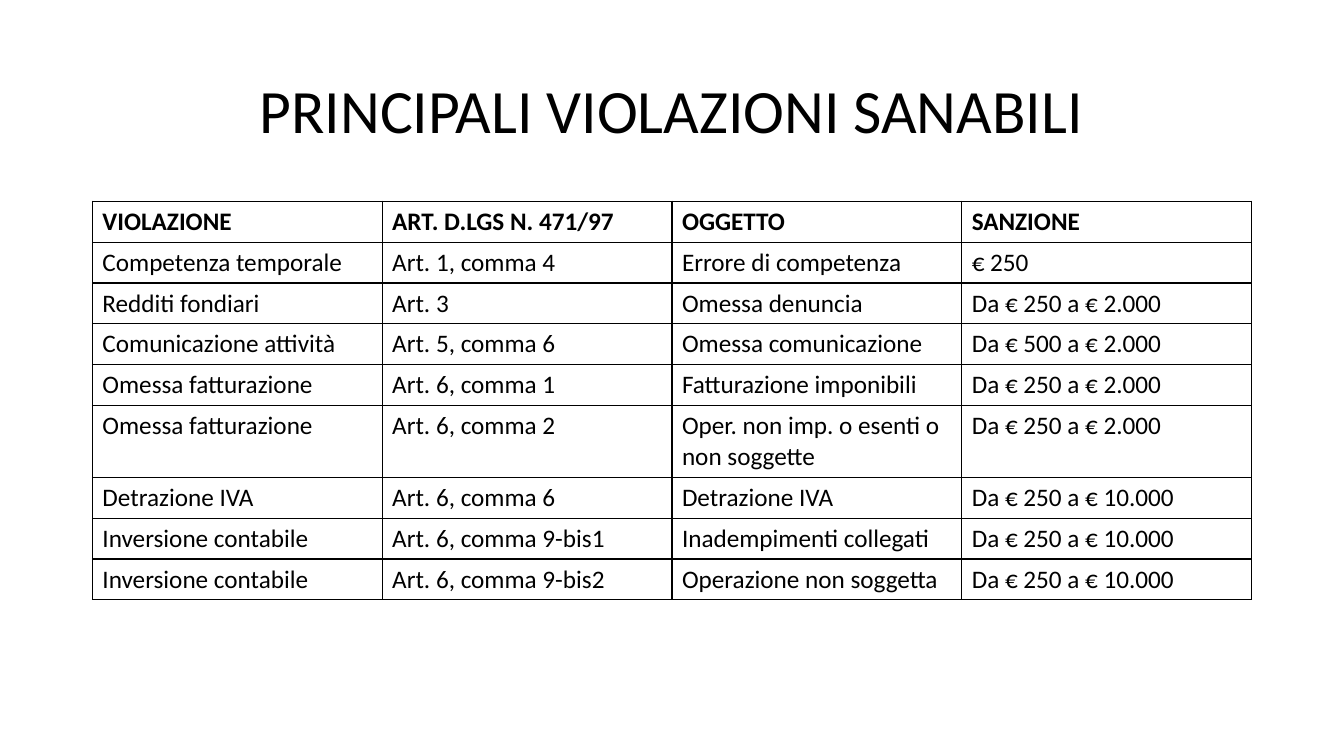
from lxml import etree
from pptx import Presentation
from pptx.dml import color
from pptx.enum import text
from pptx.oxml import ns
from pptx.util import Pt

FONT = "Calibri"
BLACK = "000000"
LEFT, WIDTH = 66, 828
ROW = 29.2

FINES = [
    ("VIOLAZIONE", "ART. D.LGS N. 471/97", "OGGETTO", "SANZIONE"),
    ("Competenza temporale", "Art. 1, comma 4", "Errore di competenza", "€ 250"),
    ("Redditi fondiari", "Art. 3", "Omessa denuncia", "Da € 250 a € 2.000"),
    ("Comunicazione attività", "Art. 5, comma 6", "Omessa comunicazione",
     "Da € 500 a € 2.000"),
    ("Omessa fatturazione", "Art. 6, comma 1", "Fatturazione imponibili",
     "Da € 250 a € 2.000"),
    ("Omessa fatturazione", "Art. 6, comma 2",
     "Oper. non imp. o esenti o non soggette", "Da € 250 a € 2.000"),
    ("Detrazione IVA", "Art. 6, comma 6", "Detrazione IVA", "Da € 250 a € 10.000"),
    ("Inversione contabile", "Art. 6, comma 9-bis1", "Inadempimenti collegati",
     "Da € 250 a € 10.000"),
    ("Inversione contabile", "Art. 6, comma 9-bis2", "Operazione non soggetta",
     "Da € 250 a € 10.000"),
]


def paint(target, shade):
    target.rgb = color.RGBColor.from_string(shade)


def add_run(para, words, size, bold=False):
    run = para.add_run()
    run.text = words
    run.font.name = FONT
    run.font.size = Pt(size)
    run.font.bold = bold
    paint(run.font.color, BLACK)


def add_title(slide, words):
    title = slide.shapes.title
    title.left, title.top = Pt(LEFT), Pt(28.75)
    title.width, title.height = Pt(WIDTH), Pt(104.4)
    frame = title.text_frame
    frame.word_wrap = True
    frame.vertical_anchor = text.MSO_ANCHOR.MIDDLE
    para = frame.paragraphs[0]
    para.alignment = text.PP_ALIGN.CENTER
    para.line_spacing = 0.9
    add_run(para, words, 44)


def add_border(cell, shade, width):
    """Draw a solid line on all four sides of a cell."""
    props = cell._tc.get_or_add_tcPr()
    for side in ("a:lnL", "a:lnR", "a:lnT", "a:lnB"):
        line = etree.SubElement(props, ns.qn(side), w=str(Pt(width)))
        fill = etree.SubElement(line, ns.qn("a:solidFill"))
        etree.SubElement(fill, ns.qn("a:srgbClr"), val=shade)


def add_grid(slide, rows):
    count = len(rows[0])
    frame = slide.shapes.add_table(len(rows), count, Pt(LEFT), Pt(143.75),
                                   Pt(WIDTH), Pt(ROW * len(rows)))
    table = frame.table
    table.first_row = table.horz_banding = False
    for col in table.columns:
        col.width = Pt(WIDTH / count)
    for i, row in enumerate(rows):
        table.rows[i].height = Pt(ROW)
        for j, words in enumerate(row):
            cell = table.cell(i, j)
            add_border(cell, BLACK, 1)
            cell.fill.background()
            add_run(cell.text_frame.paragraphs[0], words, 18, bold=i == 0)


def main():
    deck = Presentation()
    deck.slide_width, deck.slide_height = Pt(960), Pt(540)
    slide = deck.slides.add_slide(deck.slide_layouts[5])
    add_title(slide, "PRINCIPALI VIOLAZIONI SANABILI")
    add_grid(slide, FINES)
    deck.save("out.pptx")


if __name__ == "__main__":
    main()
